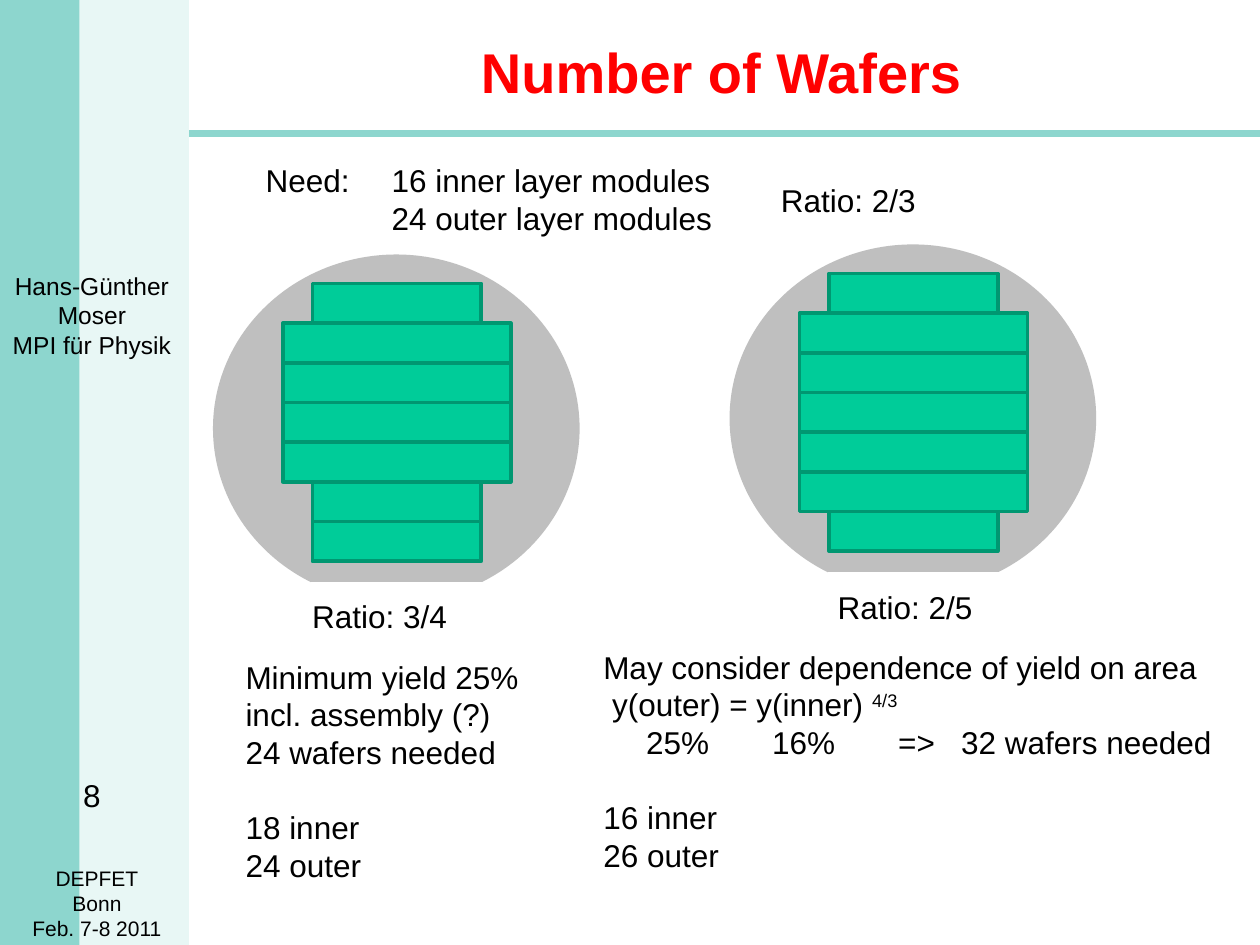
from dataclasses import dataclass

from lxml.etree import SubElement
from pptx import Presentation
from pptx.dml.color import RGBColor
from pptx.enum.shapes import MSO_CONNECTOR as Connector, MSO_SHAPE as Shape
from pptx.enum.text import MSO_ANCHOR as Anchor, PP_ALIGN as Align
from pptx.oxml.ns import qn
from pptx.util import Inches, Pt

WHITE = RGBColor(0xFF, 0xFF, 0xFF)
BLACK = RGBColor(0x00, 0x00, 0x00)
RED = RGBColor(0xFF, 0x00, 0x00)
TEAL = RGBColor(0x8D, 0xD6, 0xCE)
PALE_TEAL = RGBColor(0xE8, 0xF7, 0xF5)
WAFER_GREY = RGBColor(0xBF, 0xBF, 0xBF)
MODULE_GREEN = RGBColor(0x00, 0xCC, 0x99)
MODULE_EDGE = RGBColor(0x00, 0x97, 0x71)

FONT = "Arial"
MODULE_PITCH = 0.315
INNER_WIDTH, OUTER_WIDTH = 1.34, 1.81


@dataclass
class Line:
    """One paragraph; indent and tab stops in inches, gap in points."""
    text: str
    superscript: str = ""
    indent: float = 0
    tabs: tuple = ()
    gap: int = 0


def set_stops(para, line):
    props = para._p.get_or_add_pPr()
    if line.indent:
        props.set("marL", str(Inches(line.indent)))
        props.set("indent", "0")
    if line.tabs:
        tab_list = SubElement(props, qn("a:tabLst"))
        for stop in line.tabs:
            SubElement(tab_list, qn("a:tab"), pos=str(Inches(stop)), algn="l")


def format_font(font, size, color, bold=False):
    font.name = FONT
    font.size = Pt(size)
    font.bold = bold
    font.color.rgb = color


def add_text(slide, place, lines, size=18, align=Align.LEFT, color=BLACK):
    box = slide.shapes.add_textbox(*map(Inches, place))
    frame = box.text_frame
    frame.word_wrap = True
    for index, item in enumerate(lines):
        line = item if isinstance(item, Line) else Line(item)
        para = frame.add_paragraph() if index else frame.paragraphs[0]
        set_stops(para, line)
        para.alignment = align
        if line.gap:
            para.space_before = Pt(line.gap)
        span = para.add_run()
        span.text = line.text
        format_font(span.font, size, color)
        if line.superscript:
            raised = para.add_run()
            raised.text = line.superscript
            format_font(raised.font, size, color)
            raised._r.get_or_add_rPr().set("baseline", "30000")
    return box


def add_block(slide, place, fill, kind=Shape.RECTANGLE, edge=None):
    block = slide.shapes.add_shape(kind, *map(Inches, place))
    block.shadow.inherit = False
    block.fill.solid()
    block.fill.fore_color.rgb = fill
    if edge is None:
        block.line.fill.background()
    else:
        block.line.color.rgb = edge
        block.line.width = Pt(2)
    return block


def add_rule(slide, left, right, top):
    rule = slide.shapes.add_connector(
        Connector.STRAIGHT, Inches(left), Inches(top), Inches(right), Inches(top))
    rule.line.color.rgb = TEAL
    rule.line.width = Pt(4.5)
    SubElement(rule._element.spPr, qn("a:effectLst"))


def add_wafer(slide, left, top, widths):
    """Draw a flat-bottomed wafer with its stack of module strips."""
    add_block(slide, (left, top, 2.91, 2.76), WAFER_GREY, kind=Shape.OVAL)
    add_block(slide, (left + 0.78, top + 2.6, 1.5, 0.31), WHITE)
    center = left + 1.46
    for row, width in enumerate(widths):
        strip_top = top + 0.23 + row * MODULE_PITCH
        add_block(slide, (center - width / 2, strip_top, width, MODULE_PITCH),
                  MODULE_GREEN, edge=MODULE_EDGE)


def set_title(slide, text):
    title = slide.shapes.title
    title.left, title.top, title.width, title.height = map(
        Inches, (1.6, 0.15, 8.25, 0.83))
    frame = title.text_frame
    frame.text = text
    frame.vertical_anchor = Anchor.MIDDLE
    para = frame.paragraphs[0]
    para.alignment = Align.CENTER
    format_font(para.runs[0].font, 32, RED, bold=True)


def add_sidebar(slide):
    add_block(slide, (0.58, 0, 0.92, 7.5), PALE_TEAL)
    add_block(slide, (0, 0, 0.63, 7.5), TEAL)
    add_rule(slide, 1.5, 10, 1.06)
    add_text(slide, (0, 6.82, 1.54, 0.71), ["DEPFET", "Bonn", "Feb. 7-8 2011"],
             size=12, align=Align.CENTER)
    add_text(slide, (0, 2.1, 1.46, 0.8), ["Hans-Günther Moser", "MPI für Physik"],
             size=14, align=Align.CENTER)
    add_text(slide, (0, 6.11, 1.46, 0.52), ["8"], align=Align.CENTER)


def main():
    deck = Presentation()
    deck.slide_width, deck.slide_height = Inches(10), Inches(7.5)
    page = deck.slides.add_slide(deck.slide_layouts[5])

    add_sidebar(page)
    set_title(page, "Number of Wafers")

    # Wafer layouts: inner modules are short, outer modules long
    inner, outer = [INNER_WIDTH], [OUTER_WIDTH]
    add_wafer(page, 1.69, 2.02, inner + outer * 4 + inner * 2)
    add_wafer(page, 5.79, 1.94, inner + outer * 5 + inner)

    # Required modules and ratios
    add_text(page, (2.01, 1.23, 3.76, 0.71),
             [Line("Need:\t16 inner layer modules", tabs=(1,)),
              Line("24 outer layer modules", indent=1)])
    for left, top, ratio in ((6.1, 1.39, "2/3"), (2.38, 4.69, "3/4"),
                             (6.55, 4.62, "2/5")):
        add_text(page, (left, top, 1.3, 0.4), [f"Ratio: {ratio}"])

    # Yield estimates
    add_text(page, (1.85, 5.17, 2.39, 1.92),
             ["Minimum yield 25%", "incl. assembly (?)", "24 wafers needed",
              Line("18 inner", gap=21), "24 outer"])
    add_text(page, (4.69, 5.09, 5.26, 2.32),
             ["May consider dependence of yield on area",
              Line("y(outer) = y(inner) ", superscript="4/3", indent=0.07),
              Line("25%\t16%\t=>\t32 wafers needed", indent=0.34,
                   tabs=(1.26, 2.59, 3.02)),
              Line("16 inner", gap=21), "26 outer"])

    deck.save("out.pptx")


if __name__ == "__main__":
    main()
